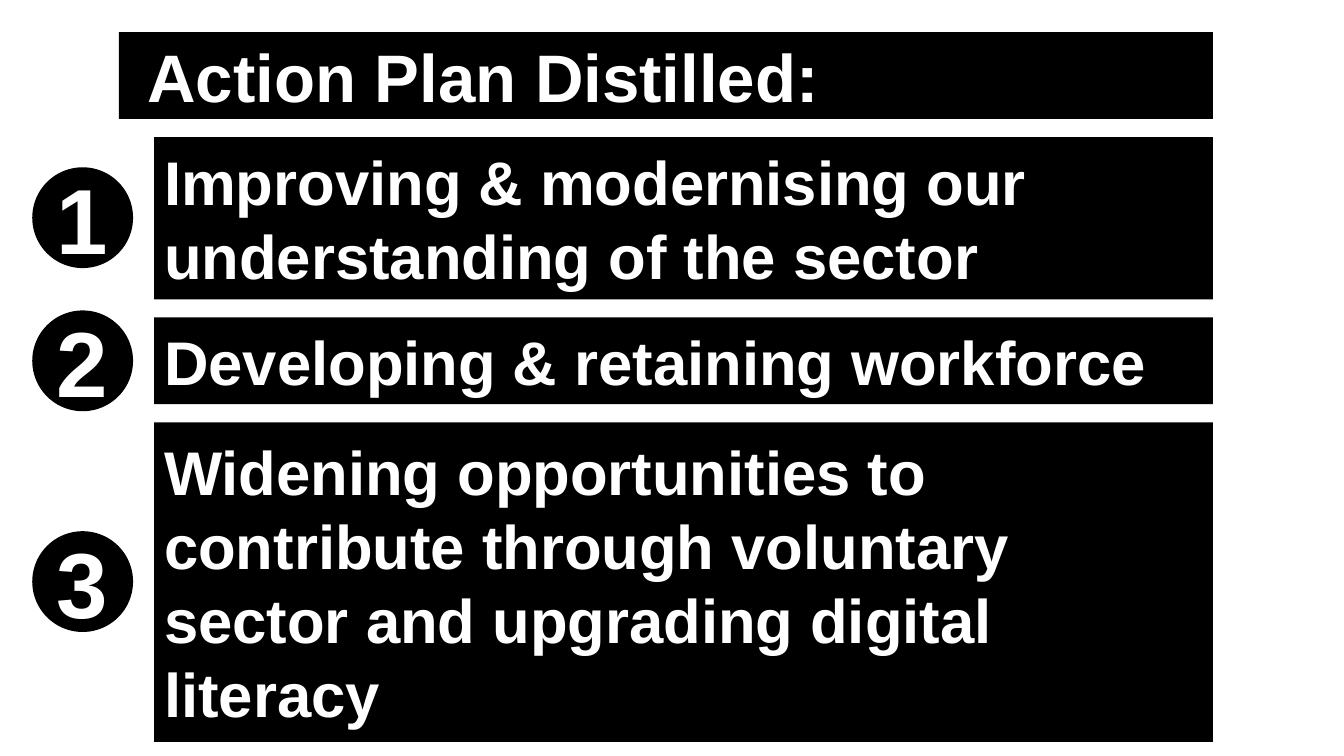
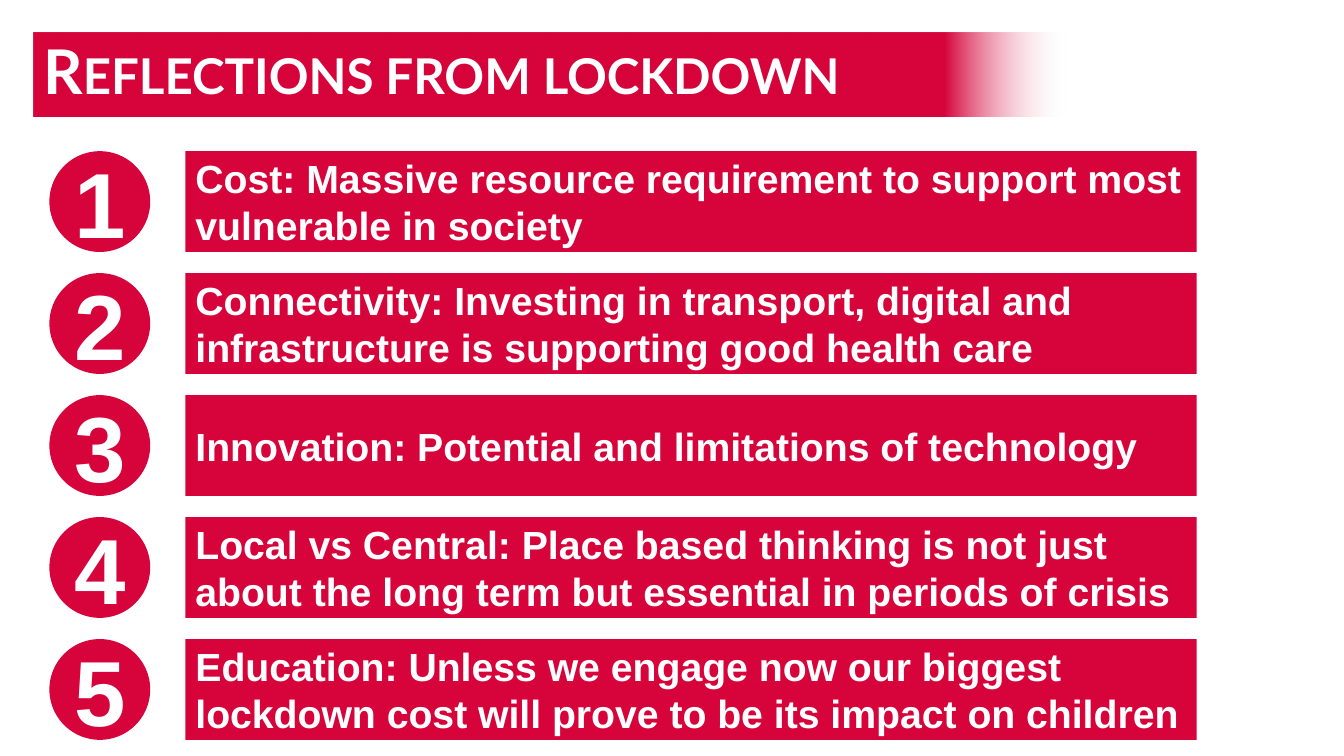
from lxml import etree
from pptx import Presentation
from pptx.dml.color import RGBColor
from pptx.enum.shapes import MSO_SHAPE
from pptx.enum.text import MSO_ANCHOR, PP_ALIGN
from pptx.oxml.ns import qn
from pptx.util import Emu, Pt

EMU_PER_PX = 9144
BLACK, CRIMSON, WHITE = "000000", "D6043B", "FFFFFF"
BADGE_SIZE = 100

ACTIONS = [
    ("Improving & modernising our understanding of the sector", 161),
    ("Developing & retaining workforce", 86),
    ("Widening opportunities to contribute through voluntary sector "
     "and upgrading digital literacy", 317),
]
REFLECTIONS = [
    "Cost: Massive resource requirement to support most vulnerable in society",
    "Connectivity: Investing in transport, digital and infrastructure "
    "is supporting good health care",
    "Innovation: Potential and limitations of technology",
    "Local vs Central: Place based thinking is not just about the long term "
    "but essential in periods of crisis",
    "Education: Unless we engage now our biggest lockdown cost will prove "
    "to be its impact on children",
]


def px(length):
    return Emu(length * EMU_PER_PX)


def rgb(hex_colour):
    return RGBColor.from_string(hex_colour)


def add_panel(slide, preset, box, colour, text, size, font_name="Arial",
              align=PP_ALIGN.LEFT):
    """Add a filled shape with bold white text; box is left, top, width, height."""
    panel = slide.shapes.add_shape(preset, *map(px, box))
    panel.shadow.inherit = False
    panel.fill.solid()
    panel.fill.fore_color.rgb = rgb(colour)
    panel.line.fill.background()
    frame = panel.text_frame
    frame.word_wrap = True
    frame.vertical_anchor = MSO_ANCHOR.MIDDLE
    frame.text = text
    paragraph = frame.paragraphs[0]
    paragraph.alignment = align
    font = paragraph.runs[0].font
    font.name = font_name
    font.size = Pt(size)
    font.bold = True
    font.color.rgb = rgb(WHITE)
    return panel


def add_band(slide, box, colour, text, size, font_name="Arial"):
    return add_panel(slide, MSO_SHAPE.RECTANGLE, box, colour, text, size, font_name)


def add_numbered_band(slide, number, badge_left, box, colour, text, size):
    """Add a band with a round number badge centred on its height."""
    _, top, _, height = box
    badge_top = top + (height - BADGE_SIZE) // 2
    add_band(slide, box, colour, text, size)
    add_panel(slide, MSO_SHAPE.OVAL,
              (badge_left, badge_top, BADGE_SIZE, BADGE_SIZE),
              colour, str(number), 66, align=PP_ALIGN.CENTER)


def fade_right_end(band, colour):
    """Let the last 12 % of the band fade into transparent white."""
    band.fill.gradient()
    gradient = band.fill._xPr.find(qn("a:gradFill"))
    for child in list(gradient):
        gradient.remove(child)
    stops = etree.SubElement(gradient, qn("a:gsLst"))
    for position, stop_colour, alpha in ((0, WHITE, 0), (12, colour, 100),
                                         (100, colour, 100)):
        stop = etree.SubElement(stops, qn("a:gs"), pos=str(position * 1000))
        shade = etree.SubElement(stop, qn("a:srgbClr"), val=stop_colour)
        etree.SubElement(shade, qn("a:alpha"), val=str(alpha * 1000))
    etree.SubElement(gradient, qn("a:lin"), ang=str(180 * 60000), scaled="0")


def build_action_plan(slide):
    gap = 18
    heading = add_band(slide, (118, 32, 1085, 86), BLACK,
                       "Action Plan Distilled:", 48)
    heading.text_frame.margin_left = px(28)
    top = 32 + 86 + gap
    for number, (action, height) in enumerate(ACTIONS, start=1):
        add_numbered_band(slide, number, 32, (153, top, 1050, height),
                          BLACK, action, 44)
        top += height + gap


def build_reflections(slide):
    first_top, pitch = 150, 121
    heading = add_band(slide, (33, 32, 1026, 84), CRIMSON,
                       "Reflections from lockdown", 44, "Lato")
    fade_right_end(heading, CRIMSON)
    paragraph = heading.text_frame.paragraphs[0]
    paragraph.line_spacing = 0.9
    paragraph.runs[0].font._element.set("cap", "small")
    for index, reflection in enumerate(REFLECTIONS):
        add_numbered_band(slide, index + 1, 49,
                          (184, first_top + index * pitch, 1003, 100),
                          CRIMSON, reflection, 28)


def main():
    deck = Presentation()
    deck.slide_width, deck.slide_height = px(1333), px(750)
    blank = deck.slide_layouts[6]
    for build in (build_action_plan, build_reflections):
        build(deck.slides.add_slide(blank))
    deck.save("out.pptx")


if __name__ == "__main__":
    main()
